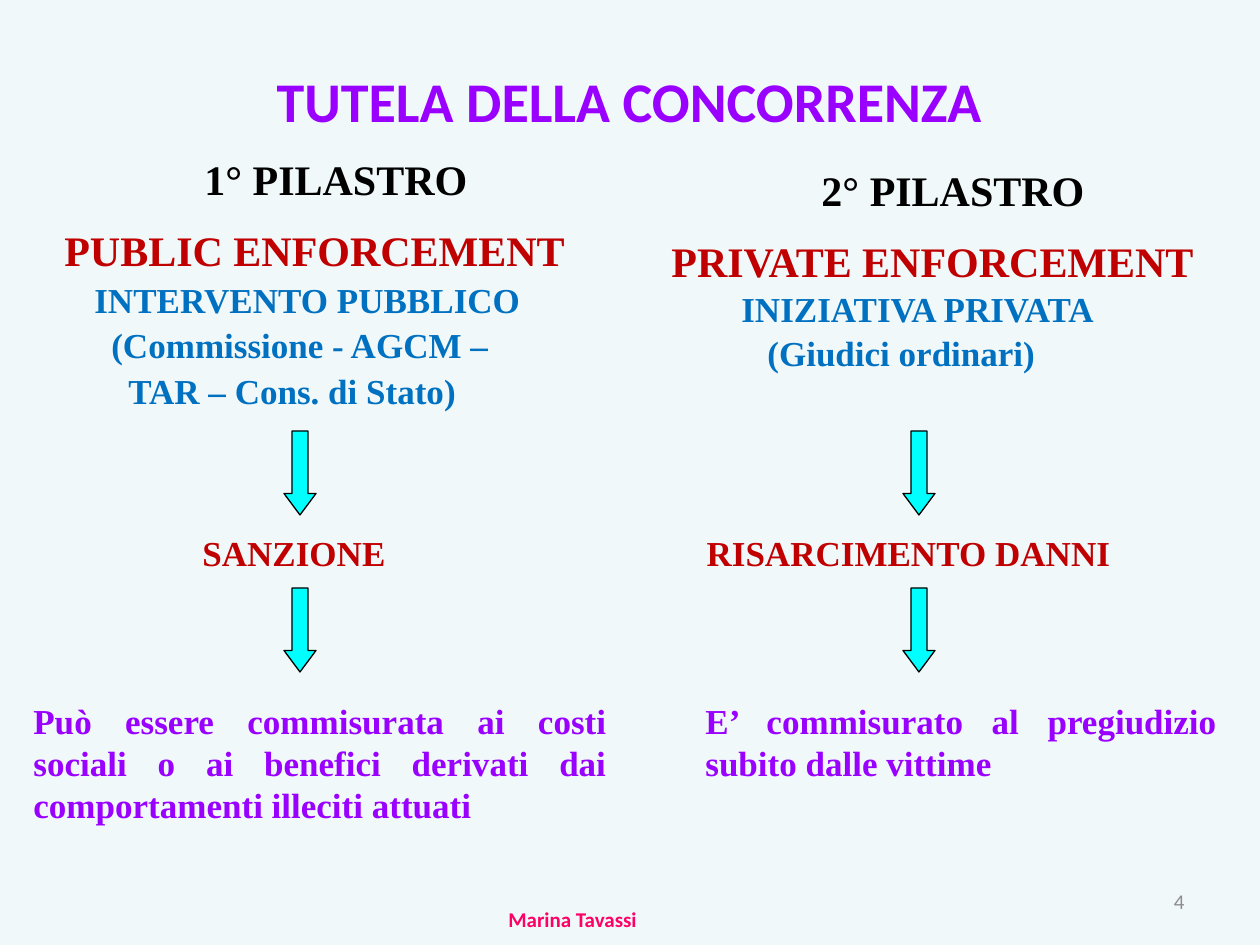
import dataclasses

import pptx
import pptx.dml.color
import pptx.enum.shapes
import pptx.enum.text
import pptx.oxml.ns
import pptx.util
from lxml import etree

PX = 914400 // 126
ALIGN = pptx.enum.text.PP_ALIGN
ANCHOR = pptx.enum.text.MSO_ANCHOR


@dataclasses.dataclass(frozen=True)
class Theme:
    """Colours, fonts and type sizes of the slide."""
    background: str = "F0F8FA"
    accent: str = "9900FF"
    ink: str = "000000"
    red: str = "C00000"
    blue: str = "0070C0"
    arrow: str = "00FFFF"
    author: str = "FF0066"
    grey: str = "8C8C8C"
    sans: str = "Calibri"
    serif: str = "Times New Roman"
    title: int = 32
    heading: int = 24
    body: int = 20
    small: int = 12


T = Theme()


def rgb(value):
    """Return a colour from its hex value."""
    return pptx.dml.color.RGBColor.from_string(value)


def box(x, y, w, h):
    """Turn a px rectangle into EMU."""
    return [v * PX for v in (x, y, w, h)]


def set_attrs(obj, values):
    """Set every attribute named in a dict."""
    for name, value in values.items():
        setattr(obj, name, value)


def line(text, color, size=T.body, font=T.serif, bold=True,
         align=ALIGN.LEFT, indent=0, spacing=None, before=50):
    """Describe one paragraph of text."""
    return {"text": text, "color": color, "indent": indent, "before": before,
            "font": {"name": font, "size": pptx.util.Pt(size), "bold": bold},
            "para": {"alignment": align,
                     "line_spacing": spacing and pptx.util.Pt(spacing)}}


def write(p, item):
    """Fill a paragraph from its description."""
    set_attrs(p, item["para"])
    r = p.add_run()
    r.text = item["text"]
    set_attrs(r.font, item["font"])
    r.font.color.rgb = rgb(item["color"])
    if item["before"]:
        p.space_before = pptx.util.Pt(0)
        before = p._p.pPr.find(pptx.oxml.ns.qn("a:spcBef"))
        before.clear()
        percent = etree.SubElement(before, pptx.oxml.ns.qn("a:spcPct"))
        percent.set("val", str(item["before"] * 1000))
    if item["indent"]:
        p._p.get_or_add_pPr().set("marL", str(item["indent"] * PX))


def add_title(slide, text):
    """Place and format the title placeholder."""
    sp = slide.shapes.title
    set_attrs(sp, dict(zip(("left", "top", "width", "height"), box(94, 21, 1071, 158))))
    sp.text_frame.vertical_anchor = ANCHOR.MIDDLE
    write(sp.text_frame.paragraphs[0],
          line(text, T.accent, T.title, T.sans, align=ALIGN.CENTER, before=0))


def add_text(slide, rect, items, anchor=ANCHOR.TOP):
    """Add a wrapping text box that holds the given paragraphs."""
    tf = slide.shapes.add_textbox(*box(*rect)).text_frame
    set_attrs(tf, {"word_wrap": True, "vertical_anchor": anchor,
                   "auto_size": pptx.enum.text.MSO_AUTO_SIZE.SHAPE_TO_FIT_TEXT})
    for i, item in enumerate(items):
        write(tf.add_paragraph() if i else tf.paragraphs[0], item)


def add_arrow(slide, x, y):
    """Add a down arrow between two steps."""
    sp = slide.shapes.add_shape(pptx.enum.shapes.MSO_SHAPE.DOWN_ARROW, *box(x, y, 32, 84))
    sp.shadow.inherit = False
    sp.adjustments[0], sp.adjustments[1] = 0.5, 0.67
    sp.fill.solid()
    sp.fill.fore_color.rgb = rgb(T.arrow)
    sp.line.color.rgb = rgb(T.ink)
    sp.line.width = pptx.util.Pt(0.75)


def add_pillar(slide, head, arrow_x, result, outcome):
    """Add one column: heading, arrows, result and outcome."""
    add_text(slide, *head)
    for y in (431, 588):
        add_arrow(slide, arrow_x, y)
    rect, text = result
    add_text(slide, rect, [line(text, T.red, align=ALIGN.CENTER)])
    rect, text = outcome
    add_text(slide, rect, [line(text, T.accent, align=ALIGN.JUSTIFY)])


def heading(number, name, indent, details, spacing):
    """Describe the heading paragraphs of a pillar."""
    return [line(f"{number}° PILASTRO", T.ink, T.heading, align=ALIGN.CENTER),
            line(name, T.red, T.heading, indent=indent),
            *(line(text, T.blue, indent=left, spacing=spacing) for text, left in details)]


def main():
    """Build and save the slide."""
    prs = pptx.Presentation()
    set_attrs(prs, {"slide_width": pptx.util.Inches(10), "slide_height": pptx.util.Inches(7.5)})
    slide = prs.slides.add_slide(prs.slide_layouts[5])
    slide.background.fill.solid()
    slide.background.fill.fore_color.rgb = rgb(T.background)
    add_title(slide, "TUTELA DELLA CONCORRENZA")
    public = heading(1, "PUBLIC ENFORCEMENT", 31,
                     [("INTERVENTO PUBBLICO", 61), ("(Commissione - AGCM –", 78),
                      ("TAR – Cons. di Stato)", 95)], 16)
    private = heading(2, "PRIVATE ENFORCEMENT", 0,
                      [("INIZIATIVA PRIVATA", 70), ("(Giudici ordinari)", 96)], 15)
    add_pillar(slide, ((21, 147, 630, 289), public), 284,
               ((84, 525, 420, 54), "SANZIONE"),
               ((21, 693, 598, 139), "Può essere commisurata ai costi sociali o ai "
                                     "benefici derivati dai comportamenti illeciti attuati"))
    add_pillar(slide, ((659, 158, 588, 237), private), 903,
               ((693, 525, 431, 54), "RISARCIMENTO DANNI"),
               ((693, 693, 536, 97), "E’ commisurato al pregiudizio subito dalle vittime"))
    add_text(slide, (392, 900, 450, 38),
             [line("Marina Tavassi", T.author, T.small, T.sans, indent=104, before=0)])
    add_text(slide, (903, 876, 294, 50),
             [line("4", T.grey, T.small, T.sans, False, ALIGN.RIGHT, before=0)], ANCHOR.MIDDLE)
    prs.save("out.pptx")


if __name__ == "__main__":
    main()
